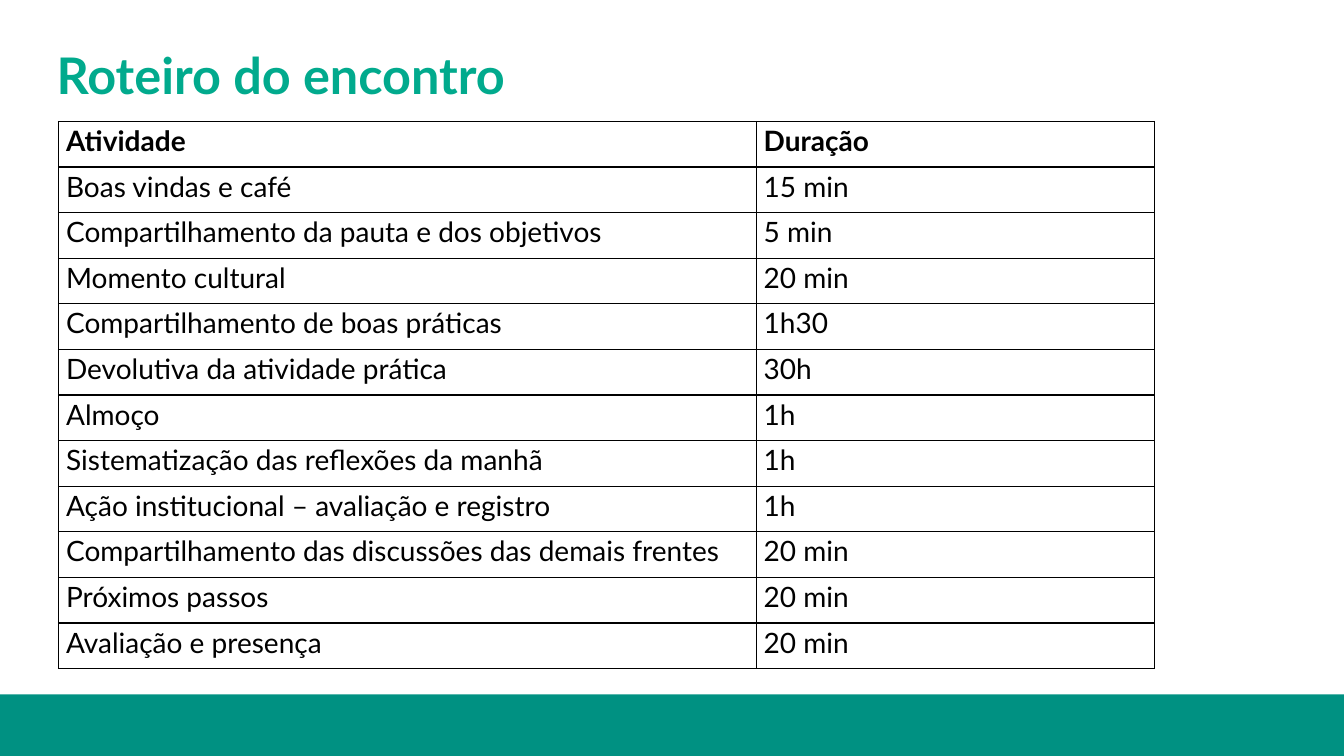
"""Build the meeting schedule slide."""
from pptx import Presentation
from pptx.dml.color import RGBColor
from pptx.enum.shapes import MSO_SHAPE
from pptx.oxml import parse_xml
from pptx.oxml.ns import nsdecls
from pptx.util import Pt

GREEN = RGBColor(0x01, 0xAA, 0x8D)
TEAL = RGBColor(0x00, 0x91, 0x82)
BLACK = RGBColor(0, 0, 0)
FONT = "Lato"
ROWS = [
    ("Atividade", "Duração"),
    ("Boas vindas e café", "15 min"),
    ("Compartilhamento da pauta e dos objetivos", "5 min"),
    ("Momento cultural", "20 min"),
    ("Compartilhamento de boas práticas", "1h30"),
    ("Devolutiva da atividade prática", "30h"),
    ("Almoço", "1h"),
    ("Sistematização das reflexões da manhã", "1h"),
    ("Ação institucional – avaliação e registro", "1h"),
    ("Compartilhamento das discussões das demais frentes", "20 min"),
    ("Próximos passos", "20 min"),
    ("Avaliação e presença", "20 min"),
]
WIDTHS = [Pt(498.3), Pt(284.4)]
HEIGHT = Pt(32.58)


def write(para, text, size, color, bold):
    run = para.add_run()
    run.text = text
    run.font.name = FONT
    run.font.size = Pt(size)
    run.font.bold = bold
    run.font.color.rgb = color


def border(cell):
    props = cell._tc.get_or_add_tcPr()
    for index, side in enumerate(("lnL", "lnR", "lnT", "lnB")):
        props.insert(index, parse_xml(
            f'<a:{side} {nsdecls("a")} w="{Pt(1)}"><a:solidFill>'
            f'<a:srgbClr val="{BLACK}"/></a:solidFill></a:{side}>'))


deck = Presentation()
deck.slide_width, deck.slide_height = Pt(960), Pt(540)
slide = deck.slides.add_slide(deck.slide_layouts[6])

band = slide.shapes.add_shape(MSO_SHAPE.RECTANGLE, Pt(0), Pt(496), Pt(960), Pt(44))
band.shadow.inherit = False
band.fill.solid()
band.fill.fore_color.rgb = TEAL
band.line.fill.background()

title = slide.shapes.add_textbox(Pt(33.4), Pt(32.4), Pt(878), Pt(46.5)).text_frame
title.word_wrap = True
title.paragraphs[0].line_spacing = Pt(39)
write(title.paragraphs[0], "Roteiro do encontro", 36, GREEN, True)

frame = slide.shapes.add_table(
    len(ROWS), len(WIDTHS), Pt(41.8), Pt(86.7), sum(WIDTHS), HEIGHT * len(ROWS))
table = frame.table
table.first_row = table.horz_banding = False
for column, width in zip(table.columns, WIDTHS):
    column.width = width
for r, row in enumerate(ROWS):
    table.rows[r].height = HEIGHT
    for c, text in enumerate(row):
        cell = table.cell(r, c)
        cell.margin_left = cell.margin_right = Pt(5.4)
        cell.margin_top = cell.margin_bottom = Pt(0)
        cell.fill.background()
        border(cell)
        para = cell.text_frame.paragraphs[0]
        para.line_spacing = 1.07
        para.space_after = Pt(8)
        write(para, text, 20, BLACK, r == 0)

deck.save("out.pptx")
